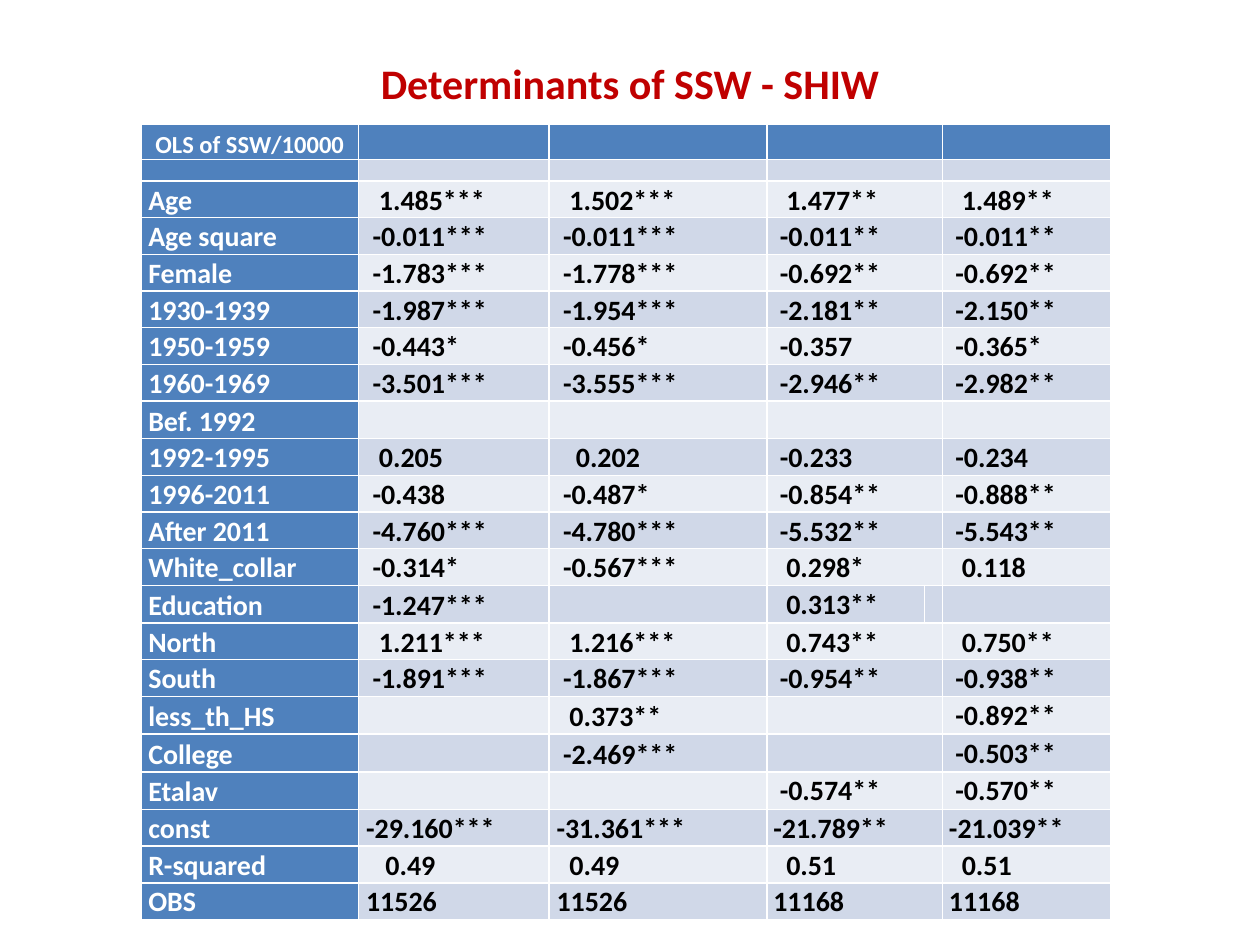
import dataclasses

import lxml.etree
import pptx
import pptx.dml.color
import pptx.enum.text
import pptx.oxml.ns
import pptx.util

Cm = pptx.util.Cm
Anchor = pptx.enum.text.MSO_ANCHOR
Align = pptx.enum.text.PP_ALIGN


@dataclasses.dataclass(frozen=True)
class Theme:
    """Colours, font and type sizes of the deck."""
    font: str = "Calibri"
    title: str = "C00000"
    head: str = "4F81BD"
    bands: tuple = ("E9EDF4", "D0D8E8")
    light: str = "FFFFFF"
    dark: str = "000000"
    title_size: int = 24
    head_size: int = 14
    body_size: int = 16
    empty_size: int = 8


@dataclasses.dataclass(frozen=True)
class Box:
    """A region of the page in centimetres."""
    left: float
    top: float
    width: float
    height: float

    def lengths(self):
        """Return left, top, width and height as lengths."""
        return [Cm(side) for side in dataclasses.astuple(self)]


THEME = Theme()
TITLE_BOX = Box(1.27, 0.76, 22.86, 1.83)
TABLE_BOX = Box(2.84, 2.51, 19.53, 15.77)
COLUMN_WIDTHS = (4.39, 3.84, 4.39, 3.18, 0.33, 3.4)
MODEL_COLUMNS = (1, 2, 3, 5)
HEAD_HEIGHT, SPACER_HEIGHT, ROW_HEIGHT, TALL_HEIGHT = 0.71, 0.43, 0.71, 0.76
TALL_ROWS = {"Bef. 1992", "Education", "less_th_HS", "College", "Etalav"}
SPLIT_ROW = "Education"
INDENT_STEP = 0.13
NUDGED = {("1992-1995", 2), ("R-squared", 1)}
RESULTS = (
    ("OLS of SSW/10000", "", "", "", ""),
    ("", "", "", "", ""),
    ("Age", "1.485***", "1.502***", "1.477**", "1.489**"),
    ("Age square", "-0.011***", "-0.011***", "-0.011**", "-0.011**"),
    ("Female", "-1.783***", "-1.778***", "-0.692**", "-0.692**"),
    ("1930-1939", "-1.987***", "-1.954***", "-2.181**", "-2.150**"),
    ("1950-1959", "-0.443*", "-0.456*", "-0.357", "-0.365*"),
    ("1960-1969", "-3.501***", "-3.555***", "-2.946**", "-2.982**"),
    ("Bef. 1992", "", "", "", ""),
    ("1992-1995", "0.205", "0.202", "-0.233", "-0.234"),
    ("1996-2011", "-0.438", "-0.487*", "-0.854**", "-0.888**"),
    ("After 2011", "-4.760***", "-4.780***", "-5.532**", "-5.543**"),
    ("White_collar", "-0.314*", "-0.567***", "0.298*", "0.118"),
    ("Education", "-1.247***", "", "0.313**", ""),
    ("North", "1.211***", "1.216***", "0.743**", "0.750**"),
    ("South", "-1.891***", "-1.867***", "-0.954**", "-0.938**"),
    ("less_th_HS", "", "0.373**", "", "-0.892**"),
    ("College", "", "-2.469***", "", "-0.503**"),
    ("Etalav", "", "", "-0.574**", "-0.570**"),
    ("const", "-29.160***", "-31.361***", "-21.789**", "-21.039**"),
    ("R-squared", "0.49", "0.49", "0.51", "0.51"),
    ("OBS", "11526", "11526", "11168", "11168"),
)


def colour(code):
    """Turn a hex code into a colour."""
    return pptx.dml.color.RGBColor.from_string(code)


def write(frame, text, *, size, tint, align=Align.LEFT, spacing=None, indent=0):
    """Put one formatted bold paragraph into a text frame."""
    para = frame.paragraphs[0]
    para.alignment = align
    para.line_spacing = spacing
    if indent:
        para._p.get_or_add_pPr().set("marL", str(Cm(indent)))
        para._p.get_or_add_pPr().set("indent", "0")
    span = para.add_run()
    span.text = text
    span.font.name = THEME.font
    span.font.size = pptx.util.Pt(size)
    span.font.bold = True
    span.font.color.rgb = colour(tint)


def value_indent(label, column, value):
    """Return the indent that lines up the decimal points of a column."""
    whole, point, _ = value.partition(".")
    steps = 3 - len(whole) if point else 0
    return INDENT_STEP * (steps + ((label, column) in NUDGED))


def row_height(index, label):
    """Return the height of a table row in centimetres."""
    if index < 2:
        return (HEAD_HEIGHT, SPACER_HEIGHT)[index]
    return TALL_HEIGHT if label in TALL_ROWS else ROW_HEIGHT


def format_cell(cell, row, column):
    """Set the fill, margins and anchor of a cell."""
    cell.fill.solid()
    is_head = row == 0 or column == 0
    cell.fill.fore_color.rgb = colour(THEME.head if is_head else THEME.bands[row % 2])
    cell.margin_left = cell.margin_right = Cm(0.15 if column < 3 else 0.13)
    cell.margin_top = cell.margin_bottom = 0
    cell.vertical_anchor = Anchor.BOTTOM if column < 3 else Anchor.TOP


def fill_row(table, index, entries):
    """Fill one table row with its label and the values of the models."""
    label = entries[0]
    table.rows[index].height = Cm(row_height(index, label))
    texts = dict(zip((0, *MODEL_COLUMNS), entries))
    for column in range(len(COLUMN_WIDTHS)):
        cell, text = table.cell(index, column), texts.get(column, "")
        format_cell(cell, index, column)
        if not text:
            mark = pptx.oxml.ns.qn("a:endParaRPr")
            lxml.etree.SubElement(cell.text_frame.paragraphs[0]._p, mark,
                                  sz=str(THEME.empty_size * 100))
            continue
        write(cell.text_frame, text,
              size=THEME.body_size if index else THEME.head_size,
              tint=THEME.dark if column else THEME.light,
              align=Align.LEFT if index else Align.CENTER,
              spacing=1.07,
              indent=value_indent(label, column, text) if column else 0)
    if label != SPLIT_ROW:
        table.cell(index, 3).merge(table.cell(index, 4))


def add_title(page, box, text):
    """Place the title placeholder in its box."""
    title = page.shapes.title
    title.left, title.top, title.width, title.height = box.lengths()
    title.text_frame.vertical_anchor = Anchor.MIDDLE
    write(title.text_frame, text, size=THEME.title_size, tint=THEME.title,
          align=Align.CENTER)


def add_results(page, box, results):
    """Place the table of regression results in its box."""
    table = page.shapes.add_table(len(results), len(COLUMN_WIDTHS), *box.lengths()).table
    table.first_col = True
    for column, width in zip(table.columns, COLUMN_WIDTHS):
        column.width = Cm(width)
    for index, entries in enumerate(results):
        fill_row(table, index, entries)


def main():
    """Build the deck and save it."""
    deck = pptx.Presentation()
    deck.slide_width, deck.slide_height = Cm(25.4), Cm(19.05)
    page = deck.slides.add_slide(deck.slide_layouts[5])
    add_results(page, TABLE_BOX, RESULTS)
    add_title(page, TITLE_BOX, "Determinants of SSW - SHIW")
    deck.save("out.pptx")


if __name__ == "__main__":
    main()
